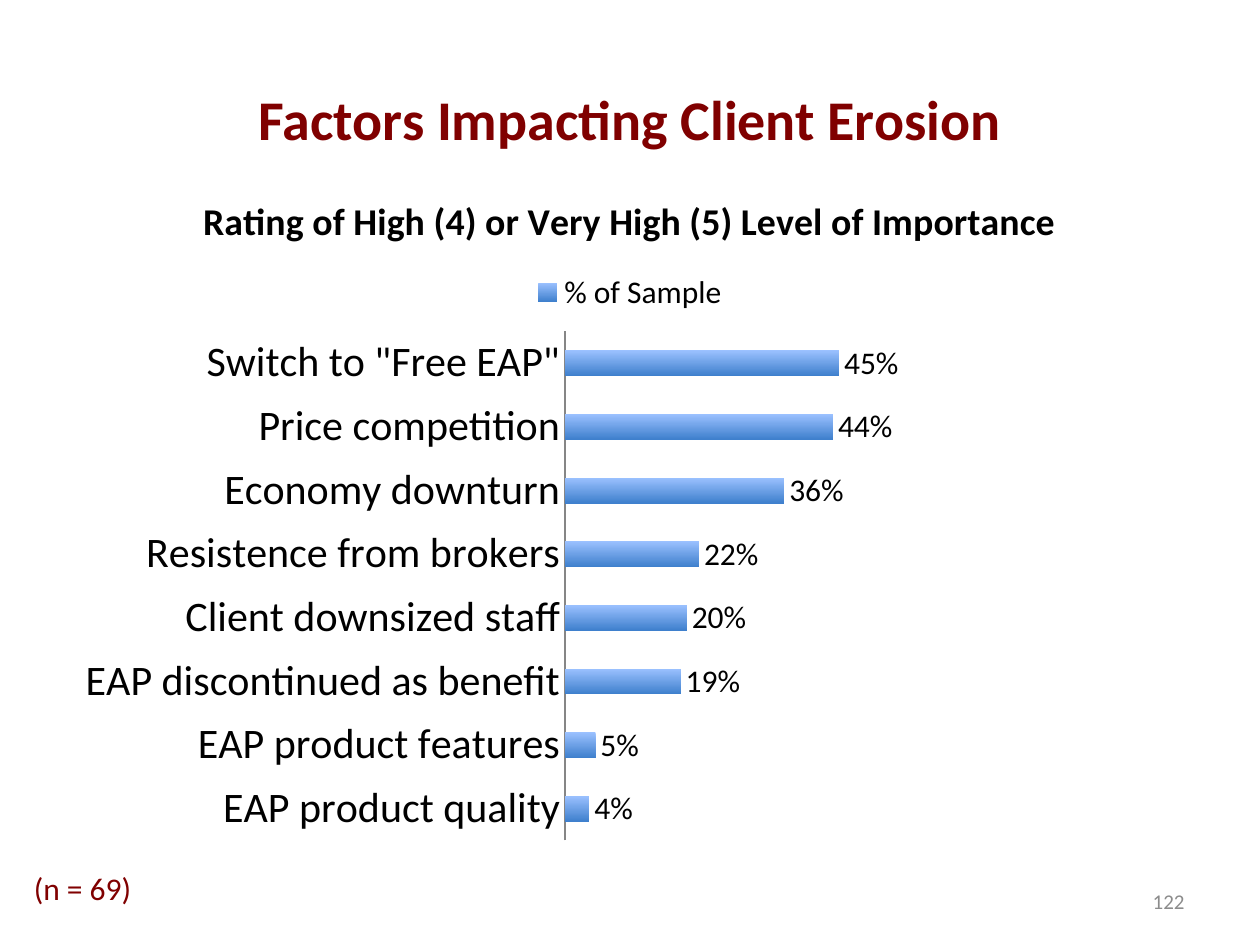
"""Build the slide on factors behind client erosion."""
import dataclasses

import pptx
import pptx.chart.data
import pptx.dml.color
import pptx.enum.chart
import pptx.enum.text
import pptx.util

WIDE, HIGH = 10, 7.5
ALIGN = pptx.enum.text.PP_ALIGN
ANCHOR = pptx.enum.text.MSO_ANCHOR
ROWS = [
    ("EAP product quality", 0.04),
    ("EAP product features", 0.05),
    ("EAP discontinued as benefit", 0.19),
    ("Client downsized staff", 0.2),
    ("Resistence from brokers", 0.22),
    ("Economy downturn", 0.36),
    ("Price competition", 0.44),
    ('Switch to "Free EAP"', 0.45),
]


@dataclasses.dataclass(frozen=True)
class Theme:
    """Hold the colours and type sizes of the slide."""
    font: str = "Calibri"
    red: str = "800000"
    black: str = "000000"
    grey: str = "8C8C8C"
    line: str = "868686"
    light: str = "9BC1FF"
    dark: str = "3F80CD"
    title: float = 32
    label: float = 24
    head: float = 21.6
    body: float = 18
    small: float = 12


THEME = Theme()


def tint(code):
    """Turn a hex code into a colour."""
    return pptx.dml.color.RGBColor.from_string(code)


def place(left, top, width, height):
    """Turn shares of the slide's size into lengths."""
    pairs = ((left, WIDE), (top, HIGH), (width, WIDE), (height, HIGH))
    return [pptx.util.Inches(share * size) for share, size in pairs]


def style(font, size, color=THEME.black, bold=False):
    """Set the face, size, colour and weight of a font."""
    font.name = THEME.font
    font.size = pptx.util.Pt(size)
    font.bold = bold
    font.color.rgb = tint(color)


def write(slide, text, area, align=ALIGN.LEFT, anchor=ANCHOR.MIDDLE,
          wrap=True, **form):
    """Add a text box with one formatted line."""
    frame = slide.shapes.add_textbox(*place(*area)).text_frame
    frame.word_wrap = wrap
    frame.vertical_anchor = anchor
    line = frame.paragraphs[0]
    line.alignment = align
    run = line.add_run()
    run.text = text
    style(run.font, **form)


def shade(fill):
    """Fill from light at the top to dark at the bottom."""
    fill.gradient()
    fill.gradient_angle = 270
    for stop, code, spot in zip(fill.gradient_stops,
                                (THEME.light, THEME.dark), (0, 1)):
        stop.color.rgb = tint(code)
        stop.position = spot


def set_axes(chart):
    """Show the names beside the bars and hide the value axis."""
    names, scale = chart.category_axis, chart.value_axis
    names.major_tick_mark = pptx.enum.chart.XL_TICK_MARK.NONE
    names.has_major_gridlines = False
    names.format.line.color.rgb = tint(THEME.line)
    style(names.tick_labels.font, THEME.label)
    scale.minimum_scale, scale.maximum_scale = 0, 1
    scale.has_major_gridlines = False
    scale.visible = False


def set_bars(plot):
    """Space, fill and label the bars."""
    plot.gap_width, plot.overlap = 150, -25
    plot.vary_by_categories = False
    shade(plot.series[0].format.fill)
    plot.has_data_labels = True
    labels = plot.data_labels
    labels.show_value = True
    labels.number_format = "0%"
    labels.number_format_is_linked = False
    labels.position = pptx.enum.chart.XL_LABEL_POSITION.OUTSIDE_END
    style(labels.font, THEME.body)


def add_bars(slide, head, name, rows, area):
    """Add a bar chart with a title and a legend on top."""
    data = pptx.chart.data.CategoryChartData(number_format="0%")
    data.categories = [label for label, _ in rows]
    data.add_series(name, [value for _, value in rows])
    kind = pptx.enum.chart.XL_CHART_TYPE.BAR_CLUSTERED
    chart = slide.shapes.add_chart(kind, *place(*area), data).chart
    style(chart.font, THEME.body)
    chart.has_title = True
    run = chart.chart_title.text_frame.paragraphs[0].add_run()
    run.text = head
    style(run.font, THEME.head, bold=True)
    chart.chart_title.include_in_layout = False
    chart.has_legend = True
    chart.legend.position = pptx.enum.chart.XL_LEGEND_POSITION.TOP
    chart.legend.include_in_layout = False
    style(chart.legend.font, THEME.body)
    set_axes(chart)
    set_bars(chart.plots[0])


def main():
    """Build and save the slide."""
    deck = pptx.Presentation()
    deck.slide_width = pptx.util.Inches(WIDE)
    deck.slide_height = pptx.util.Inches(HIGH)
    slide = deck.slides.add_slide(deck.slide_layouts[6])
    write(slide, "Factors Impacting Client Erosion", (0.05, 0.04, 0.9, 0.17),
          align=ALIGN.CENTER, size=THEME.title, color=THEME.red, bold=True)
    add_bars(slide, "Rating of High (4) or Very High (5) Level of Importance",
             "% of Sample", ROWS, (0.05, 0.177, 0.9, 0.727))
    write(slide, "(n = 69)", (0.017, 0.913, 0.103, 0.053), wrap=False,
          anchor=ANCHOR.TOP, size=THEME.body, color=THEME.red)
    write(slide, "122", (0.717, 0.927, 0.233, 0.053), align=ALIGN.RIGHT,
          size=THEME.small, color=THEME.grey)
    deck.save("out.pptx")


if __name__ == "__main__":
    main()
